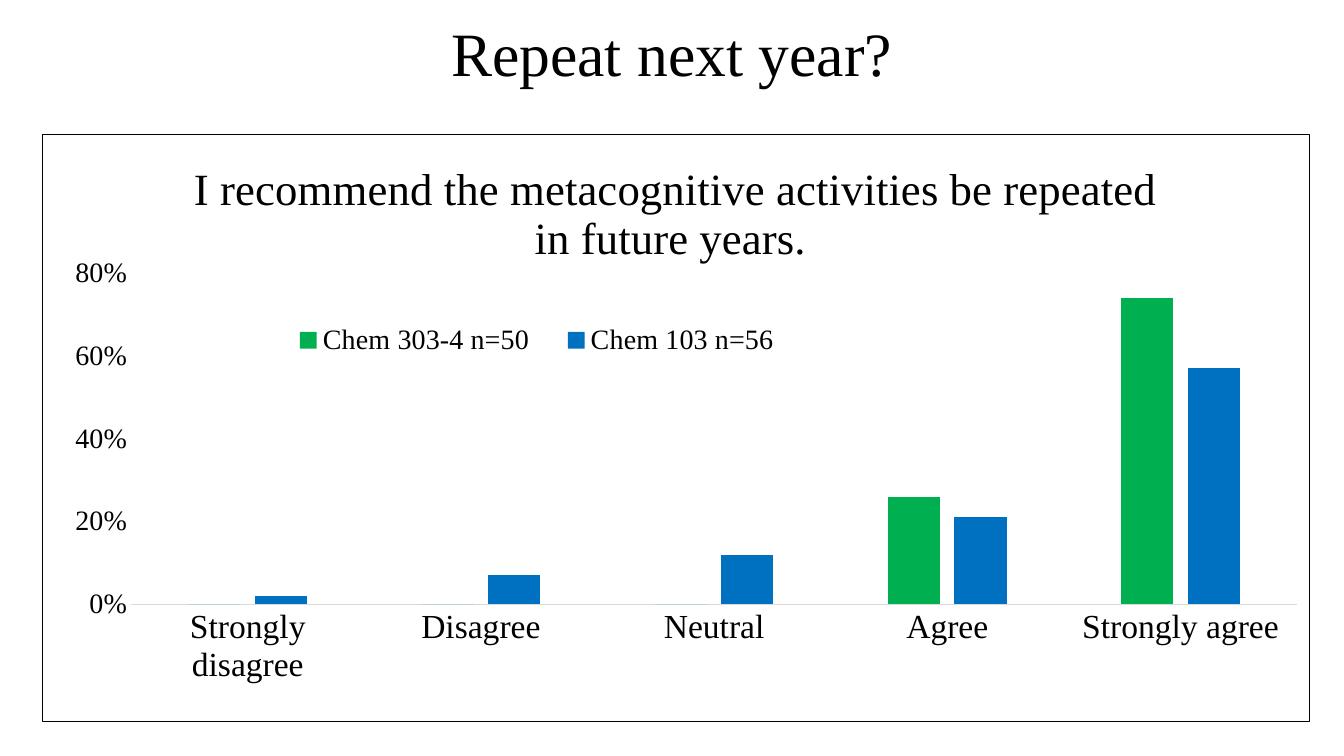
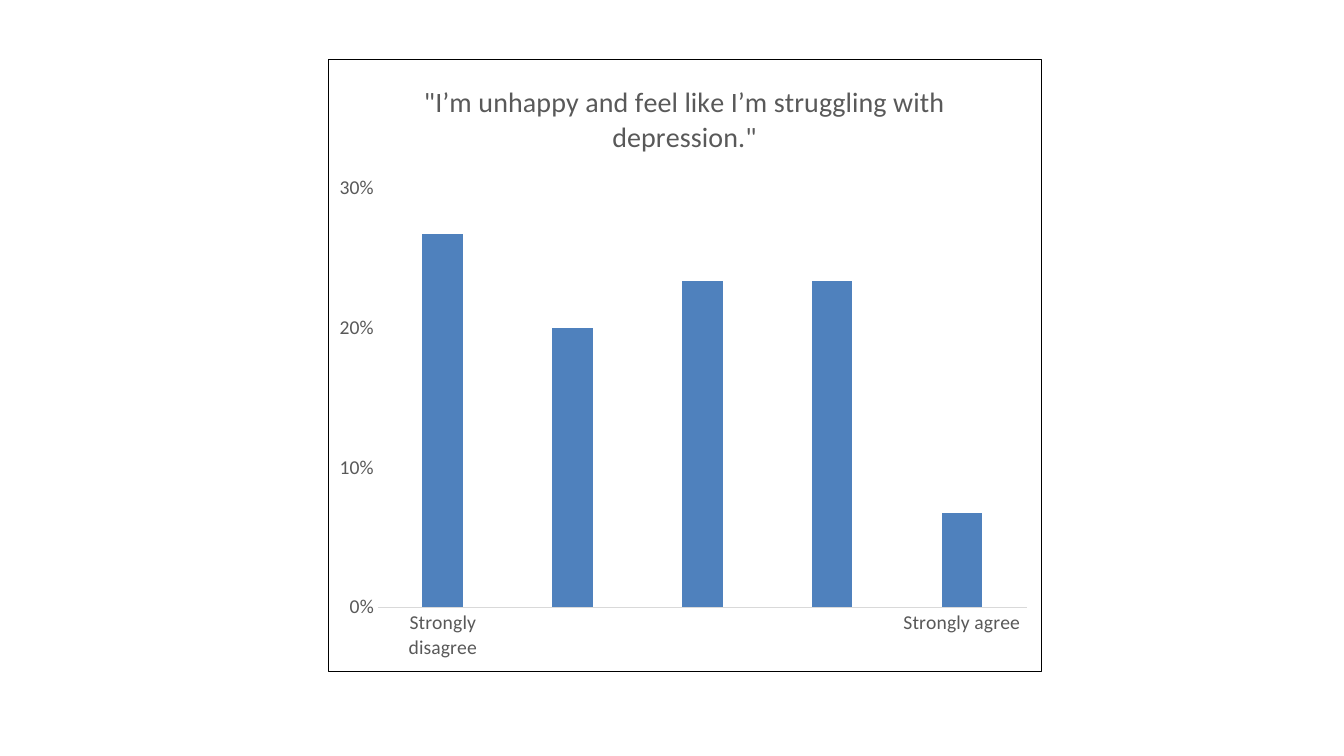
from dataclasses import dataclass

from pptx import Presentation
from pptx.chart.data import CategoryChartData
from pptx.dml.color import RGBColor
from pptx.enum import chart as ch, text
from pptx.oxml import parse_xml
from pptx.oxml.ns import nsdecls
from pptx.util import Pt


@dataclass(frozen=True)
class Theme:
    serif: str = "Times New Roman"
    sans: str = "Calibri"
    black: str = "000000"
    gray: str = "595959"
    axis: str = "D9D9D9"
    green: str = "00B050"
    blue: str = "0070C0"
    steel: str = "4F81BD"
    title_size: int = 44
    line: float = 0.75


@dataclass(frozen=True)
class ChartStyle:
    font: str
    color: str
    title: int
    category: int
    value: int


T = Theme()
LARGE = ChartStyle(T.serif, T.black, 32, 24, 20)
SMALL = ChartStyle(T.sans, T.gray, 20, 14, 14)


def set_font(font, name, size, color):
    font.name = name
    font.size = Pt(size)
    font.bold = False
    font.color.rgb = RGBColor.from_string(color)


def add_title(s, words):
    sp = s.shapes.title
    sp.left, sp.top, sp.width, sp.height = Pt(48), Pt(2), Pt(864), Pt(56)
    tf = sp.text_frame
    tf.text = words
    tf.auto_size = text.MSO_AUTO_SIZE.NONE
    tf.vertical_anchor = text.MSO_ANCHOR.TOP
    tf.margin_top = Pt(8.5)
    p = tf.paragraphs[0]
    p.alignment = text.PP_ALIGN.CENTER
    set_font(p.font, T.serif, T.title_size, T.black)


def make_layout(box, inner=False):
    target = '<c:layoutTarget val="inner"/>' if inner else ""
    modes = "".join(f'<c:{k}Mode val="edge"/>' for k in "xy")
    sizes = "".join(f'<c:{k} val="{v}"/>' for k, v in zip("xywh", box))
    return parse_xml(f'<c:layout {nsdecls("c")}><c:manualLayout>'
                     f'{target}{modes}{sizes}</c:manualLayout></c:layout>')


def set_plot_box(chart, box):
    area = chart._chartSpace.chart.plotArea
    for old in area.xpath("c:layout"):
        area.remove(old)
    area.insert(0, make_layout(box, inner=True))


def set_border(chart):
    chart._chartSpace.chart.addnext(parse_xml(
        f'<c:spPr {nsdecls("c", "a")}><a:noFill/><a:ln w="{Pt(T.line)}"><a:solidFill>'
        f'<a:srgbClr val="{T.black}"/></a:solidFill></a:ln></c:spPr>'))


def style_axes(chart, style, step, top):
    cat, val = chart.category_axis, chart.value_axis
    for axis, size in ((cat, style.category), (val, style.value)):
        axis.major_tick_mark = axis.minor_tick_mark = ch.XL_TICK_MARK.NONE
        axis.has_major_gridlines = False
        set_font(axis.tick_labels.font, style.font, size, style.color)
    cat.format.line.color.rgb = RGBColor.from_string(T.axis)
    cat.format.line.width = Pt(T.line)
    val.format.line.fill.background()
    val.minimum_scale, val.maximum_scale, val.major_unit = 0, top, step
    val.tick_labels.number_format = "0%"
    val.tick_labels.number_format_is_linked = False


def add_legend(chart, style, box):
    chart.has_legend = True
    legend = chart.legend
    legend.position = ch.XL_LEGEND_POSITION.BOTTOM
    legend.include_in_layout = False
    set_font(legend.font, style.font, style.value, style.color)
    legend._element.xpath("c:legendPos")[0].addnext(make_layout(box))


def add_columns(s, box, style, title, cats, series, step, top, plot_box):
    data = CategoryChartData(number_format="0%")
    data.categories = cats
    for name, values, _ in series:
        data.add_series(name, values)
    chart = s.shapes.add_chart(ch.XL_CHART_TYPE.COLUMN_CLUSTERED,
                               *map(Pt, box), data).chart
    set_font(chart.font, style.font, style.value, style.color)
    chart.has_legend = False
    chart.has_title = True
    tf = chart.chart_title.text_frame
    tf.text = title
    set_font(tf.paragraphs[0].font, style.font, style.title, style.color)
    chart.chart_title.include_in_layout = False
    plot = chart.plots[0]
    plot.gap_width, plot.overlap, plot.vary_by_categories = 219, -27, False
    for bars, (_, _, color) in zip(plot.series, series):
        bars.format.fill.solid()
        bars.format.fill.fore_color.rgb = RGBColor.from_string(color)
    style_axes(chart, style, step, top)
    set_plot_box(chart, plot_box)
    set_border(chart)
    return chart


def build_repeat(prs):
    s = prs.slides.add_slide(prs.slide_layouts[5])
    add_title(s, "Repeat next year?")
    chart = add_columns(
        s, (30, 96, 906, 420), LARGE,
        "I recommend the metacognitive activities be repeated in future years. ",
        ["Strongly disagree", "Disagree", "Neutral", "Agree", "Strongly agree"],
        [("Chem 303-4 n=50", (0, 0, 0, 0.26, 0.74), T.green),
         ("Chem 103 n=56", (0.02, 0.07, 0.12, 0.21, 0.57), T.blue)],
        0.2, 0.8, (0.07, 0.235, 0.92, 0.565))
    add_legend(chart, LARGE, (0.18, 0.31, 0.42, 0.08))


def build_unhappy(prs):
    s = prs.slides.add_slide(prs.slide_layouts[6])
    add_columns(
        s, (234, 42, 510, 438), SMALL,
        '"I’m unhappy and feel like I’m struggling with depression."',
        ["Strongly disagree", "", "", "", "Strongly agree"],
        [("Series 1", (0.267, 0.2, 0.233, 0.233, 0.067), T.steel)],
        0.1, 0.3, (0.07, 0.21, 0.91, 0.685))


def main():
    prs = Presentation()
    prs.slide_width, prs.slide_height = Pt(960), Pt(540)
    build_repeat(prs)
    build_unhappy(prs)
    prs.save("out.pptx")


if __name__ == "__main__":
    main()
